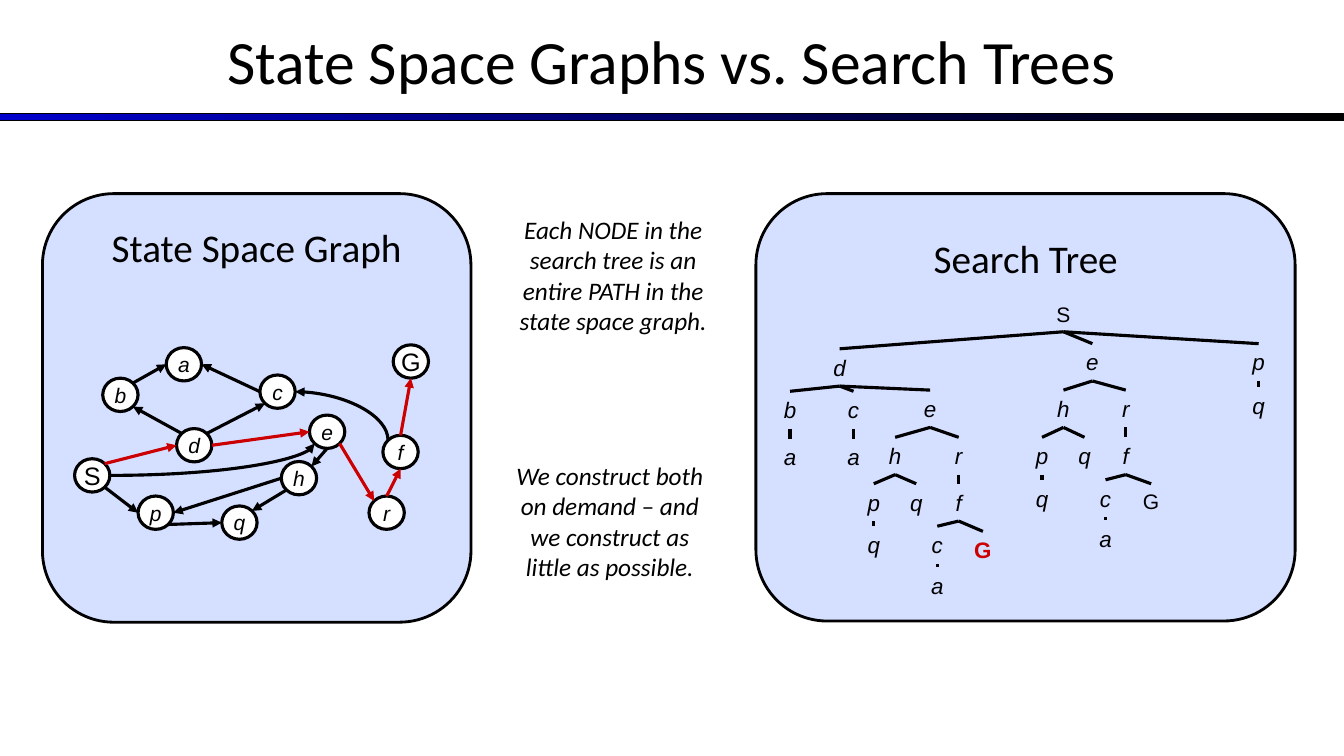
from math import sqrt

from lxml import etree
from pptx import Presentation
from pptx.dml.color import RGBColor
from pptx.enum.shapes import MSO_CONNECTOR, MSO_SHAPE
from pptx.enum.text import MSO_ANCHOR, PP_ALIGN
from pptx.oxml.ns import qn
from pptx.util import Cm, Pt

STRAIGHT, CURVE = MSO_CONNECTOR.STRAIGHT, MSO_CONNECTOR.CURVE
RECTANGLE, PANEL = MSO_SHAPE.RECTANGLE, MSO_SHAPE.ROUNDED_RECTANGLE
CIRCLE = MSO_SHAPE.FLOWCHART_CONNECTOR
TOP, MIDDLE, CENTER = MSO_ANCHOR.TOP, MSO_ANCHOR.MIDDLE, PP_ALIGN.CENTER

# Content: all lengths in centimetres
BLACK, WHITE, RED, BLUE, PALE = "000000", "FFFFFF", "CC0000", "0000CC", "D5DFFF"
TITLE = "State Space Graphs vs. Search Trees"
PANELS = [(19.05, 4.88, 13.59, 10.77), (1.07, 4.88, 10.8, 10.8)]
# text, size, italic, frame
CAPTIONS = [
    ("State Space Graph", 28, False, (1.7, 5.51, 9.53, 1.45)),
    ("Search Tree", 28, False, (19.08, 5.79, 13.54, 1.45)),
    ("Each NODE in the search tree is an entire PATH in the state space graph.",
     18, True, (12.7, 5.28, 5.51, 3.33)),
    ("We construct both on demand – and we construct as little as possible.",
     18, True, (12.5, 11.48, 5.74, 3.33)),
]
GOAL_PATH = "SderfG"

# Graph nodes: left, top
NODE_WIDTH, NODE_HEIGHT = 0.89, 0.84
GRAPH_NODES = {
    "S": (1.88, 11.56), "G": (9.91, 8.69), "d": (4.45, 10.8), "b": (2.59, 9.53),
    "p": (3.48, 12.5), "q": (5.59, 12.75), "c": (6.55, 9.45), "e": (7.8, 10.46),
    "h": (7.09, 11.63), "a": (4.19, 8.76), "f": (9.65, 10.97), "r": (9.3, 12.5),
}
# Connection sites of a circle in order, with their direction from the centre
DIAGONAL = sqrt(0.5)
SITES = {
    "N": (0, -1), "NW": (-DIAGONAL, -DIAGONAL), "W": (-1, 0),
    "SW": (-DIAGONAL, DIAGONAL), "S": (0, 1), "SE": (DIAGONAL, DIAGONAL),
    "E": (1, 0), "NE": (DIAGONAL, -DIAGONAL),
}
# start, its site, end, its site
GRAPH_EDGES = [
    ("S", "SE", "p", "W"), ("p", "SE", "q", "W"), ("h", "SW", "q", "NE"),
    ("h", "W", "p", "E"), ("e", "S", "h", "NE"), ("e", "SE", "r", "NW"),
    ("r", "N", "f", "S"), ("f", "N", "G", "S"), ("S", "NE", "d", "W"),
    ("d", "NW", "b", "SE"), ("b", "NE", "a", "W"), ("c", "W", "a", "E"),
    ("d", "NE", "c", "SW"), ("d", "E", "e", "W"),
]
# Curves leave their start sideways; the last item is the end with the arrowhead
CURVED_EDGES = [("S", "E", "e", "SW", "tailEnd"), ("c", "E", "f", "NW", "headEnd")]

# Tree nodes, keyed by the path from the root: centre, top
LABEL_WIDTH, LABEL_HEIGHT = 0.89, 0.94
TREE_NODES = {
    "S": (26.8, 7.47),
    "Sd": (21.16, 8.79), "Se": (27.53, 8.66), "Sp": (31.72, 8.66),
    "Sdb": (19.91, 9.86), "Sdc": (21.51, 9.86), "Sde": (23.44, 9.83),
    "Sdba": (19.91, 11.05), "Sdca": (21.51, 11.05),
    "Sdeh": (22.56, 11.02), "Sder": (24.16, 11.02),
    "Sdehp": (22.02, 12.19), "Sdehq": (23.09, 12.19), "Sderf": (24.16, 12.19),
    "Sdehpq": (22.02, 13.26), "Sderfc": (23.62, 13.26), "SderfG": (24.77, 13.39),
    "Sderfca": (23.62, 14.3),
    "Seh": (26.8, 9.83), "Ser": (28.37, 9.83),
    "Sehp": (26.26, 11.02), "Sehq": (27.33, 11.02), "Serf": (28.37, 11.02),
    "Sehpq": (26.26, 12.09), "Serfc": (27.86, 12.09), "SerfG": (29.01, 12.19),
    "Serfca": (27.86, 13.11),
    "Spq": (31.72, 9.75),
}


def color(value):
    return RGBColor.from_string(value)


def lengths(values):
    return [Cm(value) for value in values]


def write(shape, text, size, font="Arial", ink=BLACK, italic=False, bold=False,
          anchor=TOP, wrap=True):
    frame = shape.text_frame
    frame.text = text
    frame.word_wrap = wrap
    frame.vertical_anchor = anchor
    para = frame.paragraphs[0]
    para.alignment = CENTER
    span = para.runs[0].font
    span.name, span.size, span.italic, span.bold = font, Pt(size), italic, bold
    span.color.rgb = color(ink)
    return frame


def add_outlined(kind, frame, fill, width):
    shape = slide.shapes.add_shape(kind, *lengths(frame))
    shape.shadow.inherit = False
    shape.fill.solid()
    shape.fill.fore_color.rgb = color(fill)
    shape.line.color.rgb = color(BLACK)
    shape.line.width = Pt(width)
    return shape


def add_line(kind=STRAIGHT, ends=(0, 0, 0, 0), ink=BLACK, arrow=None):
    line = slide.shapes.add_connector(kind, *lengths(ends))
    line.line.color.rgb = color(ink)
    line.line.width = Pt(2.25)
    if arrow:
        etree.SubElement(line.line._get_or_add_ln(), qn(f"a:{arrow}"), type="triangle")
    etree.SubElement(line._element.spPr, qn("a:effectLst"))
    return line


def site_point(name, site):
    left, top = GRAPH_NODES[name]
    across, down = SITES[site]
    return left + NODE_WIDTH / 2 * (1 + across), top + NODE_HEIGHT / 2 * (1 + down)


def add_graph_edge(start, start_site, end, end_site, arrow="tailEnd", kind=STRAIGHT):
    ends = site_point(start, start_site) + site_point(end, end_site)
    ink = RED if start + end in GOAL_PATH else BLACK
    line = add_line(kind, ends, ink, arrow)
    joints = line._element.find(".//" + qn("p:cNvCxnSpPr"))
    for tag, name, site in (("stCxn", start, start_site), ("endCxn", end, end_site)):
        etree.SubElement(joints, qn(f"a:{tag}"), id=str(circles[name].shape_id),
                         idx=str(list(SITES).index(site)))
    return line


deck = Presentation()
deck.slide_width, deck.slide_height = Cm(33.87), Cm(19.05)
page = deck.slide_layouts[5]
slide = deck.slides.add_slide(page)

# Title and the rule below it
title = slide.shapes.title
title.left, title.top, title.width, title.height = lengths((0, -0.08, 33.87, 3.18))
write(title, TITLE, 44, "Calibri", anchor=MIDDLE)
rule = add_outlined(RECTANGLE, (0, 2.87, 33.87, 0.18), BLUE, 0.75)
rule.fill.gradient()
rule.fill.gradient_angle = 0
for stop, ink in zip(rule.fill.gradient_stops, (BLUE, BLACK)):
    stop.color.rgb = color(ink)

# Panels and captions
for frame in PANELS:
    add_outlined(PANEL, frame, PALE, 2)
for text, size, italic, frame in CAPTIONS:
    box = slide.shapes.add_textbox(*lengths(frame))
    write(box, text, size, "Calibri", italic=italic)

# Search tree: every node hangs from the path one step shorter
labels = {}
for route, (centre, top) in TREE_NODES.items():
    name, is_goal = route[-1], route == GOAL_PATH
    size = 15 if name.isupper() and not is_goal else 16
    height = 0.89 if size == 15 else LABEL_HEIGHT
    box = slide.shapes.add_textbox(
        *lengths((centre - LABEL_WIDTH / 2, top, LABEL_WIDTH, height)))
    frame = write(box, name, size, ink=RED if is_goal else BLACK,
                  italic=name.islower(), bold=is_goal)
    frame.margin_left = frame.margin_right = 0
    labels[route] = box
    if len(route) > 1:
        branch = add_line()
        branch.begin_connect(labels[route[:-1]], 2)
        branch.end_connect(box, 0)

# State space graph
circles = {}
for name, corner in GRAPH_NODES.items():
    circle = add_outlined(CIRCLE, corner + (NODE_WIDTH, NODE_HEIGHT), WHITE, 2.25)
    write(circle, name, 18 if name.isupper() else 15, italic=name.islower(),
          anchor=MIDDLE, wrap=False)
    circles[name] = circle
for edge in GRAPH_EDGES:
    add_graph_edge(*edge)
for edge in CURVED_EDGES:
    curve = add_graph_edge(*edge, kind=CURVE)
    curve._element.spPr.find(qn("a:prstGeom")).set("prst", "curvedConnector2")

deck.save("out.pptx")
